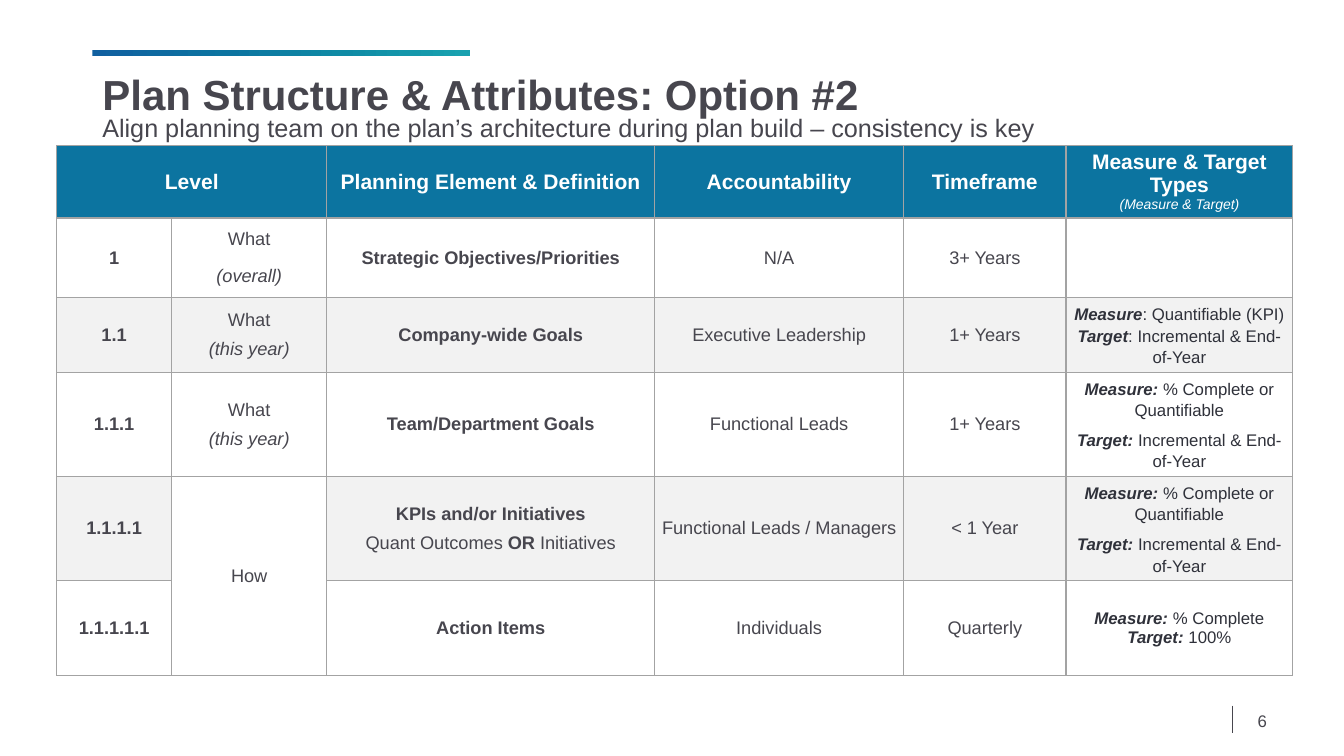
from copy import deepcopy
from lxml import etree
from pptx import Presentation
from pptx.dml.color import RGBColor
from pptx.enum.shapes import MSO_CONNECTOR, MSO_SHAPE
from pptx.enum.text import MSO_ANCHOR, PP_ALIGN
from pptx.oxml.ns import qn
from pptx.util import Pt

LEFT, CENTER, RIGHT = PP_ALIGN.LEFT, PP_ALIGN.CENTER, PP_ALIGN.RIGHT
TOP, MIDDLE = MSO_ANCHOR.TOP, MSO_ANCHOR.MIDDLE
FONT = "Arial"
INK, DARK, WHITE = "47464E", "2F313A", "FFFFFF"
BLUE, BAND, GRID = "0C74A0", "F2F2F2", "A3A3A3"

# Content: a cell is a list of paragraphs, a paragraph a list of
# (text, style) runs; style holds b for bold and i for italic
TITLE = "Plan Structure & Attributes: Option #2"
SUB = ("Align planning team on the plan’s architecture during plan build"
       " – consistency is key")
PAGE = "6"
STOPS = [(0, "1060A0"), (36, "0C74A0"), (66, "0F8BA5"), (99, "19A1AF")]
HEADS = ["Level", "", "Planning Element & Definition", "Accountability",
         "Timeframe", "Measure & Target Types"]
NOTE = "(Measure & Target)"
YEAR = [[("What", "")], [("(this year)", "i")]]
MIXED = [[("Measure: ", "bi"), ("% Complete or Quantifiable", "")],
         [("Target: ", "bi"), ("Incremental & End-of-Year", "")]]
KPI = [[("Measure", "bi"), (": Quantifiable (KPI)\n", ""),
        ("Target", "bi"), (": Incremental & End-of-Year", "")]]
DONE = [[("Measure: ", "bi"), ("% Complete\n", ""),
         ("Target: ", "bi"), ("100%", "")]]
# level, scope, element, accountability, timeframe, measures
ROWS = [
    ("1", [[("What", "")], [("(overall)", "i")]],
     [[("Strategic Objectives/Priorities", "b")]], "N/A", "3+ Years", []),
    ("1.1", YEAR, [[("Company-wide Goals", "b")]],
     "Executive Leadership", "1+ Years", KPI),
    ("1.1.1", YEAR, [[("Team/Department Goals", "b")]],
     "Functional Leads", "1+ Years", MIXED),
    ("1.1.1.1", [[("How", "")]],
     [[("KPIs and/or Initiatives", "b")],
      [("Quant Outcomes ", ""), ("OR", "b"), (" Initiatives", "")]],
     "Functional Leads / Managers", "< 1 Year", MIXED),
    ("1.1.1.1.1", [], [[("Action Items", "b")]],
     "Individuals", "Quarterly", DONE),
]
WIDTHS = [82, 111, 234, 178, 116, 162]
HEIGHTS = [42, 57, 50, 61, 74, 68]


def rgb(code):
    return RGBColor.from_string(code)


def style(font, size, color, bold=False, slant=False):
    font.name, font.size = FONT, Pt(size)
    font.bold, font.italic = bold, slant
    font.color.rgb = rgb(color)


def border(cell):
    props = cell._tc.get_or_add_tcPr()
    for n, side in enumerate(("a:lnL", "a:lnR", "a:lnT", "a:lnB")):
        line = etree.Element(qn(side), w=str(Pt(1)))
        solid = etree.SubElement(line, qn("a:solidFill"))
        etree.SubElement(solid, qn("a:srgbClr"), val=GRID)
        props.insert(n, line)


def frame(cell, fill):
    cell.margin_left = cell.margin_right = Pt(3.6)
    cell.margin_top = cell.margin_bottom = Pt(3.6)
    cell.vertical_anchor = MIDDLE
    if fill:
        cell.fill.solid()
        cell.fill.fore_color.rgb = rgb(fill)
    else:
        cell.fill.background()
    border(cell)


def write(cell, paras, size, color, gap=0, lead=None):
    body = cell.text_frame
    for n, runs in enumerate(paras):
        para = body.add_paragraph() if n else body.paragraphs[0]
        para.alignment = CENTER
        para.space_before = Pt(gap if n else 0)
        para.space_after = Pt(gap)
        if lead:
            para.line_spacing = lead
        for text, look in runs:
            run = para.add_run()
            run.text = text.rstrip("\n")
            style(run.font, size, color, "b" in look, "i" in look)
            if text.endswith("\n"):
                para.add_line_break()
                # The break takes the size of the run before it
                para._p[-1].insert(0, deepcopy(run._r.rPr))


def label(text, left, top, width, height, size, align, anchor):
    box = slide.shapes.add_textbox(Pt(left), Pt(top), Pt(width), Pt(height))
    body = box.text_frame
    body.word_wrap, body.vertical_anchor = True, anchor
    body.text = text
    body.paragraphs[0].alignment = align
    style(body.paragraphs[0].runs[0].font, size, INK)


deck = Presentation()
deck.slide_width, deck.slide_height = Pt(960), Pt(540)
slide = deck.slides.add_slide(deck.slide_layouts[5])

# Accent bar
bar = slide.shapes.add_shape(MSO_SHAPE.RECTANGLE,
                             Pt(66), Pt(36), Pt(270), Pt(4))
bar.shadow.inherit = False
bar.line.fill.background()
bar.fill.gradient()
bar.fill.gradient_angle = 0
stops = bar._element.spPr.find(".//" + qn("a:gsLst"))
for old in list(stops):
    stops.remove(old)
for place, code in STOPS:
    stop = etree.SubElement(stops, qn("a:gs"), pos=str(place * 1000))
    etree.SubElement(stop, qn("a:srgbClr"), val=code)

# Rule beside the page number
rule = slide.shapes.add_connector(MSO_CONNECTOR.STRAIGHT,
                                  Pt(880), Pt(504), Pt(880), Pt(523.5))
rule.line.color.rgb = rgb(INK)
rule.line.width = Pt(0.5)
etree.SubElement(rule._element.spPr, qn("a:effectLst"))

# Table
table = slide.shapes.add_table(
    len(HEIGHTS), len(WIDTHS), Pt(40.5), Pt(104),
    Pt(sum(WIDTHS)), Pt(sum(HEIGHTS))).table
table.first_row = table.horz_banding = False
for col, width in zip(table.columns, WIDTHS):
    col.width = Pt(width)
for row, height in zip(table.rows, HEIGHTS):
    row.height = Pt(height)

for c, head in enumerate(HEADS):
    cell = table.cell(0, c)
    frame(cell, BLUE)
    last = c == len(HEADS) - 1
    if head:
        runs = [(head + "\n", "b"), (NOTE, "i")] if last else [(head, "b")]
        write(cell, [runs], 15, WHITE)
    if last:
        cell.text_frame.paragraphs[0].runs[-1].font.size = Pt(10)

for r, (level, scope, part, owner, time, goal) in enumerate(ROWS, 1):
    gap = 6 if r == 1 else 3
    cells = [[[(level, "b")]], scope, part, [[(owner, "")]], [[(time, "")]]]
    for c, paras in enumerate(cells):
        merged = c == 1 and r >= 4
        frame(table.cell(r, c), BAND if r % 2 == 0 and not merged else None)
        write(table.cell(r, c), paras, 13, INK, gap)
    cell = table.cell(r, 5)
    frame(cell, BAND if r % 2 == 0 else None)
    write(cell, goal, 12, DARK, gap, None if goal is DONE else 1.14)

table.cell(0, 0).merge(table.cell(0, 1))
table.cell(4, 1).merge(table.cell(5, 1))

# Title, subtitle and page number
title = slide.shapes.title
title.left, title.top = Pt(66), Pt(38)
title.width, title.height = Pt(828), Pt(63)
title.text_frame.text = TITLE
title.text_frame.vertical_anchor = MIDDLE
para = title.text_frame.paragraphs[0]
para.alignment, para.line_spacing = LEFT, 0.9
style(para.runs[0].font, 30, INK, True)
label(SUB, 66, 76.5, 689, 29, 18, LEFT, TOP)
label(PAGE, 678, 500.5, 234, 29, 12, RIGHT, MIDDLE)

deck.save("out.pptx")
